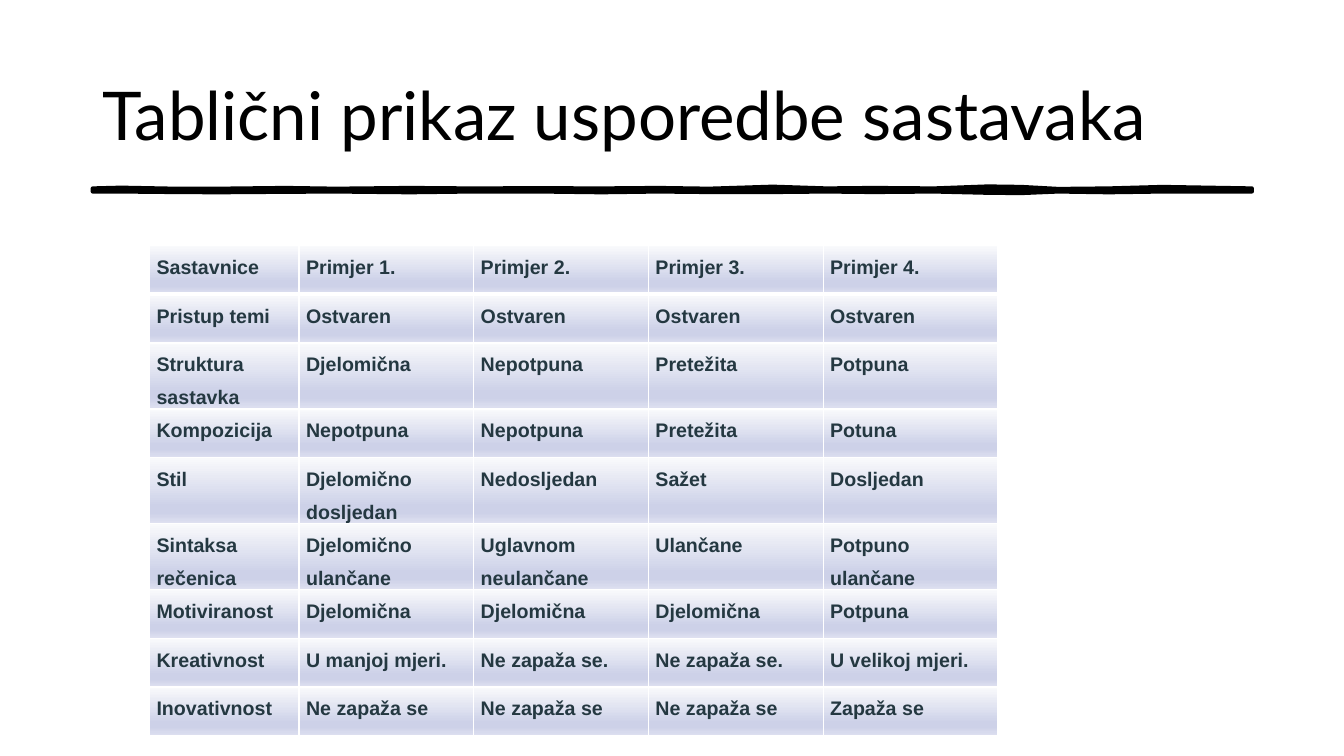
from dataclasses import dataclass

from lxml.etree import SubElement
from pptx import Presentation
from pptx.dml.color import RGBColor
from pptx.enum.text import MSO_ANCHOR, PP_ALIGN
from pptx.oxml.ns import qn
from pptx.slide import Slide
from pptx.table import _Cell
from pptx.text.text import _Paragraph
from pptx.util import Emu, Inches, Pt

SLIDE_W, SLIDE_H = Inches(40 / 3), Inches(7.5)
GRID_COLS, GRID_ROWS = 40, 30
COLORS = {
    "ink": "000000",
    "cell_text": "243841",
    "border": "FFFFFF",
    "pale": "F9FAFC",
    "lilac": "CDD1E8",
    "mist": "DEE0F0",
}
CELL_GRADIENT = [(0, "pale"), (74, "lilac"), (83, "lilac"), (100, "mist")]
COL_WIDTHS = [4.45] + [5.2] * 4
ROW_HEIGHT = 1.93
COMPARISON = [
    ["Sastavnice", "Primjer 1.", "Primjer 2.", "Primjer 3.", "Primjer 4."],
    ["Pristup temi", "Ostvaren", "Ostvaren", "Ostvaren", "Ostvaren"],
    ["Struktura sastavka", "Djelomična", "Nepotpuna", "Pretežita", "Potpuna"],
    ["Kompozicija", "Nepotpuna", "Nepotpuna", "Pretežita", "Potuna"],
    ["Stil", "Djelomično dosljedan", "Nedosljedan", "Sažet", "Dosljedan"],
    ["Sintaksa rečenica", "Djelomično ulančane", "Uglavnom neulančane",
     "Ulančane", "Potpuno ulančane"],
    ["Motiviranost", "Djelomična", "Djelomična", "Djelomična", "Potpuna"],
    ["Kreativnost", "U manjoj mjeri.", "Ne zapaža se.", "Ne zapaža se.",
     "U velikoj mjeri."],
    ["Inovativnost", "Ne zapaža se", "Ne zapaža se", "Ne zapaža se", "Zapaža se"],
]


@dataclass(frozen=True)
class Box:
    col: float
    row: float
    cols: float
    rows: float

    def place(self) -> tuple[Emu, Emu, Emu, Emu]:
        return across(self.col), down(self.row), across(self.cols), down(self.rows)


@dataclass(frozen=True)
class TextStyle:
    font: str
    size: int
    color: str
    bold: bool = False


@dataclass(frozen=True)
class StrokePoint:
    col: float
    top: float
    bottom: float


TITLE_BOX = Box(2.76, 1.6, 34.5, 5.8)
TABLE_BOX = Box(4.45, 9.75, sum(COL_WIDTHS), ROW_HEIGHT * len(COMPARISON))
TITLE_STYLE = TextStyle("Lato", 48, "ink")
CELL_STYLE = TextStyle("Arial", 14, "cell_text", True)
BRUSH_STROKE = [
    StrokePoint(2.76, 7.48, 7.6),
    StrokePoint(3.6, 7.45, 7.6),
    StrokePoint(5.2, 7.49, 7.62),
    StrokePoint(6.5, 7.49, 7.63),
    StrokePoint(8.5, 7.46, 7.61),
    StrokePoint(10, 7.49, 7.6),
    StrokePoint(12.2, 7.46, 7.63),
    StrokePoint(14, 7.48, 7.6),
    StrokePoint(16.1, 7.47, 7.6),
    StrokePoint(17.9, 7.48, 7.63),
    StrokePoint(19.6, 7.46, 7.6),
    StrokePoint(21.1, 7.49, 7.62),
    StrokePoint(23, 7.41, 7.62),
    StrokePoint(24.6, 7.48, 7.6),
    StrokePoint(26, 7.46, 7.62),
    StrokePoint(27.8, 7.48, 7.6),
    StrokePoint(29.4, 7.4, 7.65),
    StrokePoint(30.4, 7.42, 7.66),
    StrokePoint(31.5, 7.5, 7.6),
    StrokePoint(33, 7.48, 7.63),
    StrokePoint(34.6, 7.42, 7.6),
    StrokePoint(37.26, 7.48, 7.6),
]


def across(cols: float) -> Emu:
    return Emu(round(SLIDE_W * cols / GRID_COLS))


def down(rows: float) -> Emu:
    return Emu(round(SLIDE_H * rows / GRID_ROWS))


def rgb(name: str) -> RGBColor:
    return RGBColor.from_string(COLORS[name])


def add_run(p: _Paragraph, text: str, style: TextStyle) -> None:
    r = p.add_run()
    r.text = text
    r.font.name = style.font
    r.font.size = Pt(style.size)
    r.font.bold = style.bold
    r.font.color.rgb = rgb(style.color)


def add_title(s: Slide, text: str) -> None:
    sp = s.shapes.title
    sp.left, sp.top, sp.width, sp.height = TITLE_BOX.place()
    tf = sp.text_frame
    tf.word_wrap = True
    tf.vertical_anchor = MSO_ANCHOR.MIDDLE
    p = tf.paragraphs[0]
    p.alignment = PP_ALIGN.LEFT
    add_run(p, text, TITLE_STYLE)


def add_brush_stroke(s: Slide) -> None:
    upper = [(across(pt.col), down(pt.top)) for pt in BRUSH_STROKE]
    lower = [(across(pt.col), down(pt.bottom)) for pt in reversed(BRUSH_STROKE)]
    builder = s.shapes.build_freeform(*upper[0])
    builder.add_line_segments(upper[1:] + lower, close=True)
    sp = builder.convert_to_shape()
    sp.shadow.inherit = False
    sp.fill.solid()
    sp.fill.fore_color.rgb = rgb("ink")
    sp.line.color.rgb = rgb("ink")
    sp.line.width = Pt(3)


def paint_cell(cell: _Cell, bottom_pt: float, top_pt: float) -> None:
    tcPr = cell._tc.get_or_add_tcPr()
    for side, width in (("L", 1), ("R", 1), ("T", top_pt), ("B", bottom_pt)):
        ln = SubElement(tcPr, qn(f"a:ln{side}"), w=str(Pt(width)))
        fill = SubElement(ln, qn("a:solidFill"))
        SubElement(fill, qn("a:srgbClr"), val=COLORS["border"])
    grad = SubElement(tcPr, qn("a:gradFill"), rotWithShape="1")
    stops = SubElement(grad, qn("a:gsLst"))
    for share, color in CELL_GRADIENT:
        gs = SubElement(stops, qn("a:gs"), pos=str(share * 1000))
        SubElement(gs, qn("a:srgbClr"), val=COLORS[color])
    SubElement(grad, qn("a:lin"), ang=str(90 * 60000), scaled="0")


def fill_cell(cell: _Cell, text: str) -> None:
    cell.margin_left = cell.margin_right = across(0.21)
    cell.margin_top = cell.margin_bottom = 0
    p = cell.text_frame.paragraphs[0]
    p.line_spacing = 1.5
    p.space_after = Pt(8)
    add_run(p, text, CELL_STYLE)


def add_comparison(s: Slide) -> None:
    frame = s.shapes.add_table(len(COMPARISON), len(COL_WIDTHS), *TABLE_BOX.place())
    table = frame.table
    table.horz_banding = False
    for column, width in zip(table.columns, COL_WIDTHS):
        column.width = across(width)
    for i, (row, texts) in enumerate(zip(table.rows, COMPARISON)):
        row.height = down(ROW_HEIGHT)
        for cell, text in zip(row.cells, texts):
            fill_cell(cell, text)
            paint_cell(cell, 3 if i == 0 else 1, 3 if i == 1 else 1)


def main() -> None:
    prs = Presentation()
    prs.slide_width, prs.slide_height = SLIDE_W, SLIDE_H
    s = prs.slides.add_slide(prs.slide_layouts[5])
    add_brush_stroke(s)
    add_title(s, "Tablični prikaz usporedbe sastavaka")
    add_comparison(s)
    prs.save("out.pptx")


if __name__ == "__main__":
    main()
